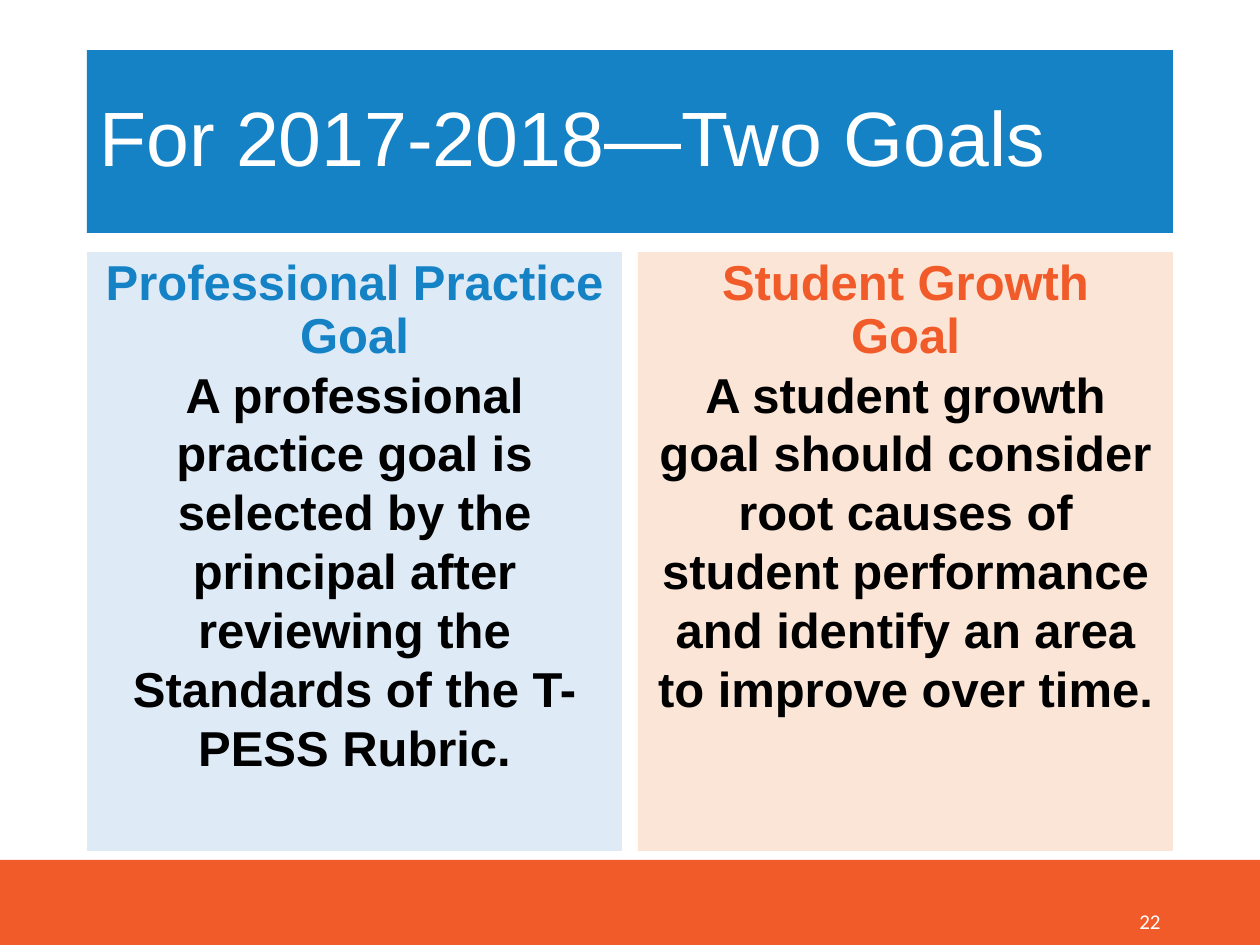
import pptx
import pptx.util
import pptx.dml.color
import pptx.enum.shapes
import pptx.enum.text

RGB = pptx.dml.color.RGBColor
ALIGN = pptx.enum.text.PP_ALIGN
ANCHOR = pptx.enum.text.MSO_ANCHOR
WHITE = RGB(0xFF, 0xFF, 0xFF)
BLACK = RGB(0x00, 0x00, 0x00)
BLUE = RGB(0x15, 0x82, 0xC6)
ORANGE = RGB(0xF1, 0x5A, 0x29)
PALE_BLUE = RGB(0xDE, 0xEB, 0xF7)
PALE_ORANGE = RGB(0xFB, 0xE5, 0xD6)

EMU_PER_PX = 914400 // 126
PAGE_WIDTH, PAGE_HEIGHT = 1260, 945
MARGIN = 87
CONTENT_WIDTH = PAGE_WIDTH - 2 * MARGIN
COLUMN_GAP = 16
COLUMN_WIDTH = (CONTENT_WIDTH - COLUMN_GAP) // 2

GOALS = [
    ("Professional Practice Goal", BLUE, PALE_BLUE,
     "A professional practice goal is selected by the principal after "
     "reviewing the Standards of the T-PESS Rubric."),
    ("Student Growth\vGoal", ORANGE, PALE_ORANGE,
     "A student growth goal should consider root causes of student "
     "performance and identify an area to improve over time."),
]


def px(length):
    """Turn a length in px into EMU."""
    return pptx.util.Emu(length * EMU_PER_PX)


def apply(target, formats):
    """Set each attribute named in formats on the target."""
    for name, value in formats.items():
        setattr(target, name, value)


def add_panel(page, box, fill):
    """Add a plain filled rectangle and return its shape."""
    panel = page.shapes.add_shape(
        pptx.enum.shapes.MSO_SHAPE.RECTANGLE, *map(px, box))
    panel.shadow.inherit = False
    panel.fill.solid()
    panel.fill.fore_color.rgb = fill
    panel.line.fill.background()
    return panel


def write(para, text, color, font, layout):
    """Fill a paragraph with text in the given font and layout."""
    para.text = text
    apply(para, layout)
    for span in para.runs:
        apply(span.font, font)
        span.font.color.rgb = color


def add_title(page, box, text):
    """Place the title band."""
    frame = add_panel(page, box, BLUE).text_frame
    apply(frame, {"word_wrap": True, "vertical_anchor": ANCHOR.MIDDLE})
    write(frame.paragraphs[0], text, WHITE,
          {"name": "Arial", "size": pptx.util.Pt(44)},
          {"alignment": ALIGN.LEFT, "line_spacing": 0.9})


def add_goal(page, box, heading, accent, fill, body):
    """Place one goal column with its heading and description."""
    frame = add_panel(page, box, fill).text_frame
    apply(frame, {"word_wrap": True, "vertical_anchor": ANCHOR.TOP})
    font = {"name": "Arial", "size": pptx.util.Pt(28), "bold": True}
    write(frame.paragraphs[0], heading, accent, font,
          {"alignment": ALIGN.CENTER, "line_spacing": 0.9})
    write(frame.add_paragraph(), body, BLACK, font,
          {"alignment": ALIGN.CENTER, "line_spacing": 1.0})


def add_footer(page, box, number):
    """Place the footer band with the page number at its right."""
    left, top, width, height = box
    add_panel(page, box, ORANGE)
    number_box = (left + width - MARGIN - 284, top + 36, 284, 50)
    frame = page.shapes.add_textbox(*map(px, number_box)).text_frame
    apply(frame, {"word_wrap": True, "vertical_anchor": ANCHOR.MIDDLE})
    write(frame.paragraphs[0], number, WHITE,
          {"name": "Calibri", "size": pptx.util.Pt(12)},
          {"alignment": ALIGN.RIGHT})


def main():
    """Build the slide and save it."""
    deck = pptx.Presentation()
    apply(deck, {"slide_width": px(PAGE_WIDTH), "slide_height": px(PAGE_HEIGHT)})
    page = deck.slides.add_slide(deck.slide_layouts[6])
    add_footer(page, (0, 860, PAGE_WIDTH, 85), "22")
    add_title(page, (MARGIN, 50, CONTENT_WIDTH, 183), "For 2017-2018—Two Goals")
    for index, goal in enumerate(GOALS):
        left = MARGIN + index * (COLUMN_WIDTH + COLUMN_GAP)
        add_goal(page, (left, 252, COLUMN_WIDTH, 599), *goal)
    deck.save("out.pptx")


if __name__ == "__main__":
    main()
